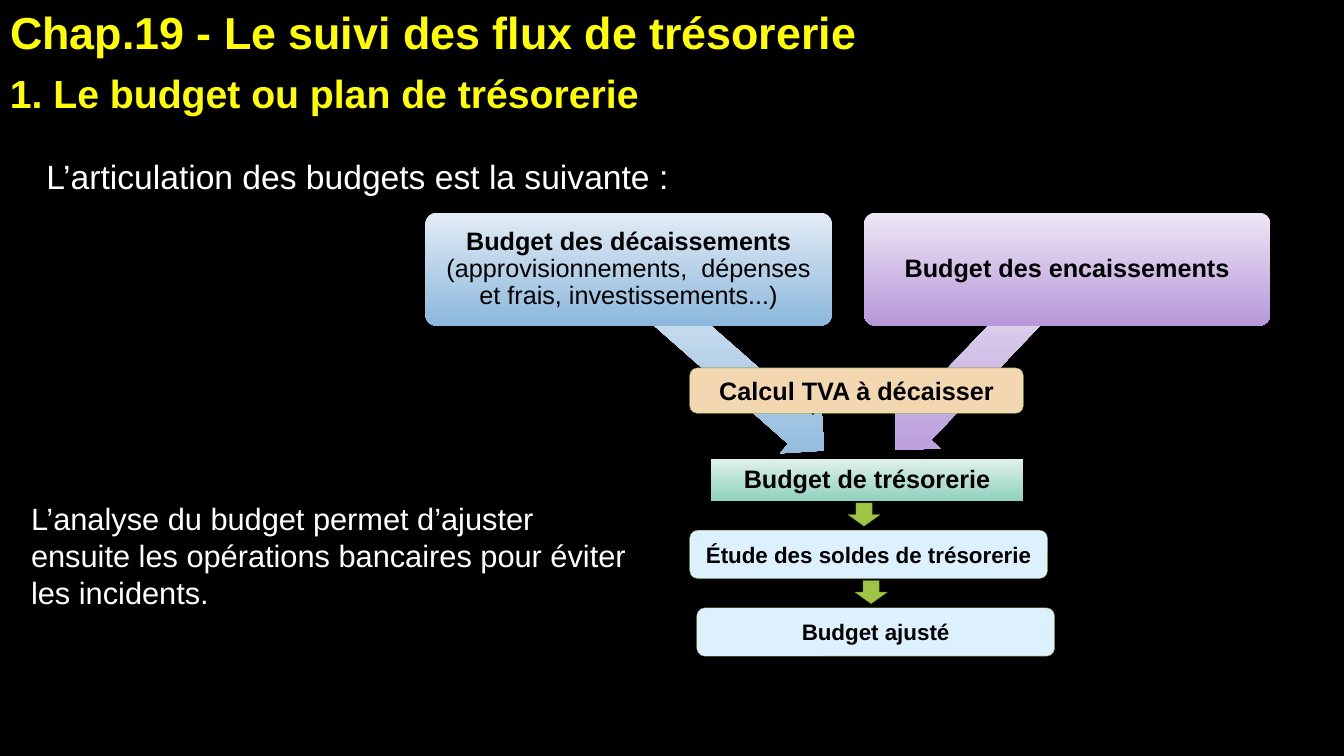
from pptx import Presentation
from pptx.dml.color import RGBColor
from pptx.enum.shapes import MSO_SHAPE
from pptx.enum.text import MSO_ANCHOR, MSO_AUTO_SIZE, PP_ALIGN
from pptx.util import Inches, Pt

ROUNDED = MSO_SHAPE.ROUNDED_RECTANGLE
PROCESS = MSO_SHAPE.FLOWCHART_PROCESS
LEFT_ARROW = MSO_SHAPE.LEFT_ARROW
DOWN_ARROW = MSO_SHAPE.DOWN_ARROW
TOP, MIDDLE = MSO_ANCHOR.TOP, MSO_ANCHOR.MIDDLE
LEFT, CENTER = PP_ALIGN.LEFT, PP_ALIGN.CENTER
NO_AUTOFIT = MSO_AUTO_SIZE.NONE

BLACK = RGBColor(0x00, 0x00, 0x00)
WHITE = RGBColor(0xFF, 0xFF, 0xFF)
YELLOW = RGBColor(0xFF, 0xFF, 0x00)
OLIVE = RGBColor(0x75, 0x92, 0x32)
GREEN = RGBColor(0x9E, 0xC5, 0x44)
SAND = RGBColor(0xF2, 0xD7, 0xB1)
SKY = RGBColor(0xDD, 0xF0, 0xFE)
MINT_SHADES = RGBColor(0xE1, 0xF1, 0xEC), RGBColor(0x8F, 0xD1, 0xBE)
BLUE_SHADES = RGBColor(0xE3, 0xEC, 0xF5), RGBColor(0x8C, 0xB8, 0xDC)
PURPLE_SHADES = RGBColor(0xED, 0xE7, 0xF5), RGBColor(0xB7, 0x98, 0xDA)


def write(box, runs, size, color, align=LEFT, anchor=TOP):
    frame = box.text_frame
    frame.word_wrap = True
    frame.auto_size = NO_AUTOFIT
    frame.vertical_anchor = anchor
    para = frame.paragraphs[0]
    para.alignment = align
    para.space_before = Pt(0)
    para.font.name = "Arial"
    para.font.size = Pt(size)
    para.font.color.rgb = color
    for text, bold in runs:
        span = para.add_run()
        span.text = text
        span.font.bold = bold
    return para


def draw(kind, area, colors):
    shape = page.shapes.add_shape(kind, *map(Inches, area))
    shape.shadow.inherit = False
    if len(colors) == 1:
        shape.fill.solid()
        shape.fill.fore_color.rgb = colors[0]
        shape.line.color.rgb = OLIVE
        shape.line.width = Pt(0.25)
    else:
        shape.fill.gradient()
        shape.fill.gradient_angle = 270
        for stop, position, color in zip(shape.fill.gradient_stops, (0, 1), colors):
            stop.position = position
            stop.color.rgb = color
        shape.line.fill.background()
    return shape


deck = Presentation()
deck.slide_width, deck.slide_height = Inches(13.33), Inches(7.5)
page = deck.slides.add_slide(deck.slide_layouts[1])
page.background.fill.solid()
page.background.fill.fore_color.rgb = BLACK

title, intro = page.placeholders
section = page.shapes.add_textbox(0, 0, 0, 0)
analysis = page.shapes.add_textbox(0, 0, 0, 0)

for box, area, text, size, color, bold, before in [
    (title, (0, 0, 10.67, 0.64), "Chap.19 - Le suivi des flux de trésorerie", 32, YELLOW, True, 3),
    (section, (0, 0.64, 11.11, 0.57), "1. Le budget ou plan de trésorerie", 28, YELLOW, True, 12),
    (intro, (0.36, 1.5, 11.63, 3.6), "L’articulation des budgets est la suivante\u00a0:", 24, WHITE, False, 0),
    (analysis, (0.21, 4.91, 6.1, 1.21),
     "L’analyse du budget permet d’ajuster ensuite les opérations bancaires pour éviter les incidents.",
     22, WHITE, False, 0),
]:
    box.left, box.top, box.width, box.height = map(Inches, area)
    para = write(box, [(text, bold)], size, color)
    para.space_before = Pt(before)

bullet = intro.text_frame.paragraphs[0]._p.get_or_add_pPr()
bullet.set("marL", "0")
bullet.set("indent", "0")
bullet.insert_element_before(bullet.makeelement(
    "{http://schemas.openxmlformats.org/drawingml/2006/main}buNone", {}), "a:tabLst", "a:defRPr")

for area, turn, shades in [
    ((5.82, 3.27, 2.69, 0.62), 221.4, BLUE_SHADES),
    ((8.5, 3.25, 2.49, 0.62), 313.6, PURPLE_SHADES),
]:
    arrow = draw(LEFT_ARROW, area, shades)
    arrow.adjustments[0] = 0.6
    arrow.rotation = turn
    arrow.fill._xPr.gradFill.set("rotWithShape", "0")

for kind, area, shades, inset, runs in [
    (PROCESS, (7.05, 4.55, 3.1, 0.42), MINT_SHADES, 0.01, [("Budget de trésorerie", True)]),
    (ROUNDED, (4.22, 2.11, 4.03, 1.12), BLUE_SHADES, 0.07,
     [("Budget des décaissements ", True),
      ("(approvisionnements,  dépenses et frais, investissements...)", False)]),
    (ROUNDED, (8.57, 2.11, 4.03, 1.12), PURPLE_SHADES, 0.07, [("Budget des encaissements", True)]),
]:
    budget = draw(kind, area, shades)
    if kind == ROUNDED:
        budget.adjustments[0] = 0.1
    frame = budget.text_frame
    frame.margin_left = frame.margin_right = Inches(inset)
    frame.margin_top = frame.margin_bottom = Inches(inset)
    para = write(budget, runs, 18, BLACK, CENTER, MIDDLE)
    para.line_spacing = 0.9

for area, color, size, text in [
    ((6.84, 3.65, 3.31, 0.45), SAND, 18, "Calcul TVA à décaisser"),
    ((6.84, 5.26, 3.55, 0.48), SKY, 16, "Étude des soldes de trésorerie"),
    ((6.91, 6.03, 3.55, 0.48), SKY, 16, "Budget ajusté"),
]:
    step = draw(ROUNDED, area, [color])
    write(step, [(text, True)], size, BLACK, CENTER, MIDDLE)

for left, top in [(8.41, 4.99), (8.48, 5.76)]:
    draw(DOWN_ARROW, (left, top, 0.32, 0.23), [GREEN])

deck.save("out.pptx")
